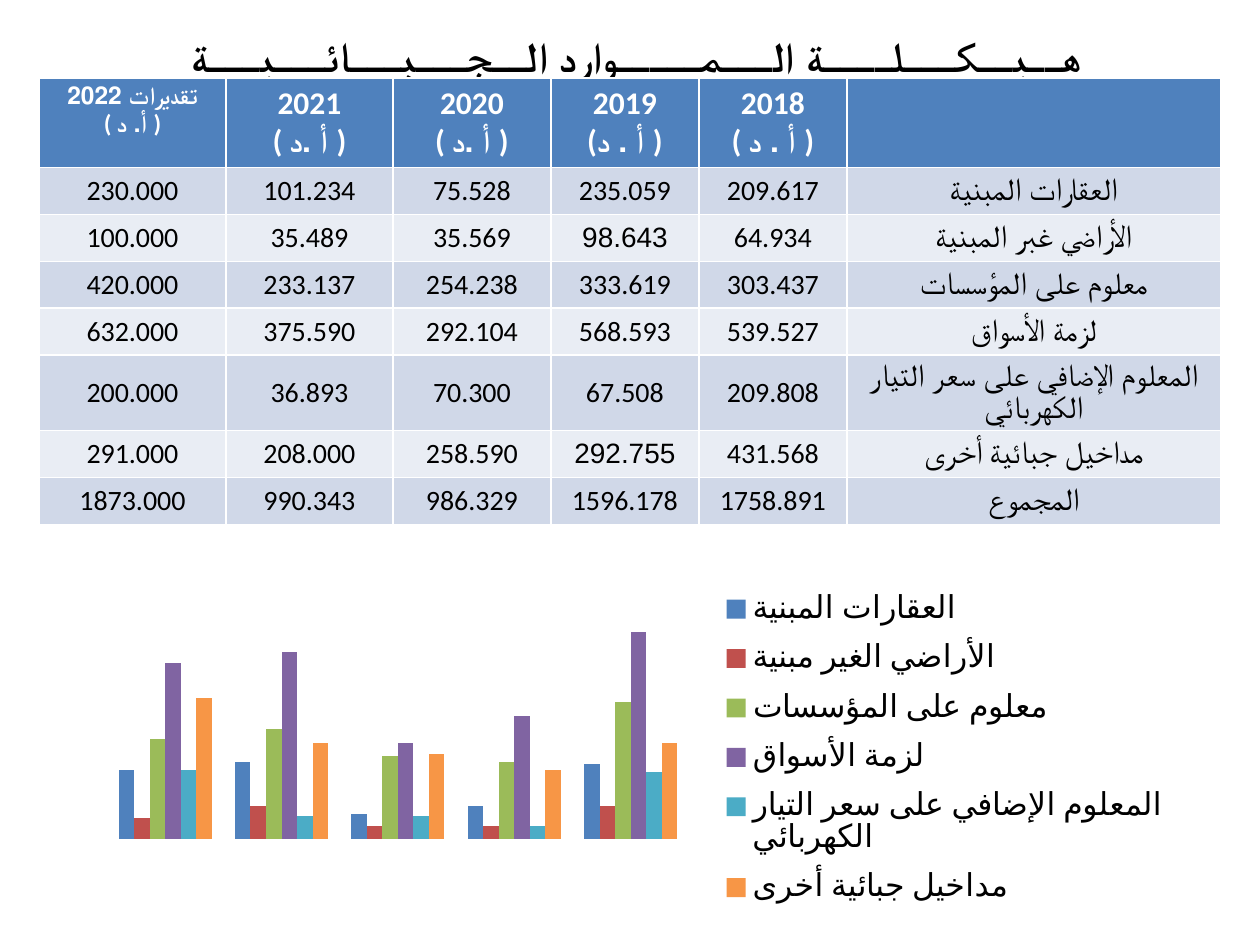
from lxml import etree
from pptx import Presentation
from pptx.chart.data import CategoryChartData
from pptx.dml.color import RGBColor
from pptx.enum.chart import XL_CHART_TYPE as ChartType, XL_LEGEND_POSITION as LegendPos
from pptx.enum.text import MSO_ANCHOR as Anchor, PP_ALIGN as Align
from pptx.oxml.ns import qn
from pptx.util import Pt

PX = 914400 // 126
BLACK = RGBColor(0x00, 0x00, 0x00)
WHITE = RGBColor(0xFF, 0xFF, 0xFF)
HEADER_BLUE = RGBColor(0x4F, 0x81, 0xBD)
BANDS = [RGBColor(0xD0, 0xD8, 0xE8), RGBColor(0xE9, 0xED, 0xF4)]


def add_line(paragraph, text, size, color, bold=False, font="Calibri"):
    paragraph.alignment = Align.CENTER
    run = paragraph.add_run()
    run.text = text
    run.font.size, run.font.bold, run.font.name = Pt(size), bold, font
    run.font.color.rgb = color


def set_layout(parent, before, **settings):
    """Place a chart part by fractions of the chart area."""
    for old in parent.findall(qn("c:layout")):
        parent.remove(old)
    layout = etree.Element(qn("c:layout"))
    manual = etree.SubElement(layout, qn("c:manualLayout"))
    for tag, value in settings.items():
        etree.SubElement(manual, qn("c:" + tag)).set("val", str(value))
    parent.insert(before, layout)


deck = Presentation()
deck.slide_width, deck.slide_height = 1260 * PX, 945 * PX
slide = deck.slides.add_slide(deck.slide_layouts[5])

# Title
title = slide.shapes.title
title.left, title.top, title.width, title.height = 69 * PX, 20 * PX, 1134 * PX, 71 * PX
title.text_frame.vertical_anchor = Anchor.MIDDLE
add_line(title.text_frame.paragraphs[0],
         "هــيــكـــلــــة الـــمـــــوارد الــجـــبـــائـــيـــة", 24, BLACK, True)

# Revenue table
headers = [("تقديرات 2022", "( أ. د )"), ("2021", "( أ .د )"), ("2020", "( أ .د )"),
           ("2019", "(أ . د )"), ("2018", "( أ . د )"), ()]
revenues = [
    ("230.000", "101.234", "75.528", "235.059", "209.617", "العقارات المبنية"),
    ("100.000", "35.489", "35.569", "98.643", "64.934", "الأراضي غبر المبنية"),
    ("420.000", "233.137", "254.238", "333.619", "303.437", "معلوم على المؤسسات"),
    ("632.000", "375.590", "292.104", "568.593", "539.527", "لزمة الأسواق"),
    ("200.000", "36.893", "70.300", "67.508", "209.808",
     "المعلوم الإضافي على سعر التيار الكهربائي"),
    ("291.000", "208.000", "258.590", "292.755", "431.568", "مداخيل جبائية أخرى"),
    ("1873.000", "990.343", "986.329", "1596.178", "1758.891", "المجموع"),
]
arial_values = {"98.643", "292.755"}
column_widths = [187, 167, 158, 148, 148, 374]
table = slide.shapes.add_table(len(revenues) + 1, len(headers), 39 * PX, 78 * PX,
                               sum(column_widths) * PX, 357 * PX).table
for column, width in zip(table.columns, column_widths):
    column.width = width * PX
for index, row in enumerate(table.rows):
    row.height = (44 if index else 49) * PX

for col, lines in enumerate(headers):
    cell = table.cell(0, col)
    cell.fill.solid()
    cell.fill.fore_color.rgb = HEADER_BLUE
    for index, line in enumerate(lines):
        frame = cell.text_frame
        paragraph = frame.add_paragraph() if index else frame.paragraphs[0]
        add_line(paragraph, line, 18 if col else 14, WHITE, True)

for index, values in enumerate(revenues):
    for col, value in enumerate(values):
        cell = table.cell(index + 1, col)
        cell.fill.solid()
        cell.fill.fore_color.rgb = BANDS[index % 2]
        cell.vertical_anchor = Anchor.MIDDLE
        add_line(cell.text_frame.paragraphs[0], value, 18 if col == 5 else 16, BLACK,
                 font="Arial" if value in arial_values else "Calibri")

# Revenue chart
sources = [
    ("العقارات المبنية", (33, 37, 12, 16, 36), HEADER_BLUE),
    ("الأراضي الغير مبنية", (10, 16, 6, 6, 16), RGBColor(0xC0, 0x50, 0x4D)),
    ("معلوم على المؤسسات", (48, 53, 40, 37, 66), RGBColor(0x9B, 0xBB, 0x59)),
    ("لزمة الأسواق", (85, 90, 46, 59, 100), RGBColor(0x80, 0x64, 0xA2)),
    ("المعلوم الإضافي على سعر التيار الكهربائي", (33, 11, 11, 6, 32),
     RGBColor(0x4B, 0xAC, 0xC6)),
    ("مداخيل جبائية أخرى", (68, 46, 41, 33, 46), RGBColor(0xF7, 0x96, 0x46)),
]
chart_data = CategoryChartData()
chart_data.categories = ["1", "2", "3", "4", "5"]
for name, values, color in sources:
    chart_data.add_series(name, values)
chart = slide.shapes.add_chart(ChartType.COLUMN_CLUSTERED, 0, 552 * PX,
                               1188 * PX, 393 * PX, chart_data).chart
chart.has_title = False
chart.font.size, chart.font.name = Pt(18), "Calibri"
chart.font.color.rgb = BLACK
chart.category_axis.visible = False
chart.value_axis.visible = False
chart.value_axis.has_major_gridlines = False
chart.value_axis.minimum_scale, chart.value_axis.maximum_scale = 0, 110

columns = chart.plots[0]
columns.vary_by_categories = False
columns.gap_width, columns.overlap = 150, 0
for series, (name, values, color) in zip(columns.series, sources):
    series.format.fill.solid()
    series.format.fill.fore_color.rgb = color

# Plot area and legend side by side
chart.has_legend = True
chart.legend.position = LegendPos.RIGHT
chart.legend.include_in_layout = False
plot_area = chart.element.find(".//" + qn("c:plotArea"))
set_layout(plot_area, 0, layoutTarget="inner", xMode="edge", yMode="edge",
           x=0.09, y=0.15, w=0.49, h=0.58)
set_layout(chart.element.find(".//" + qn("c:legend")), 1, xMode="edge", yMode="edge",
           x=0.6, y=0.06, w=0.39, h=0.88)

deck.save("out.pptx")
